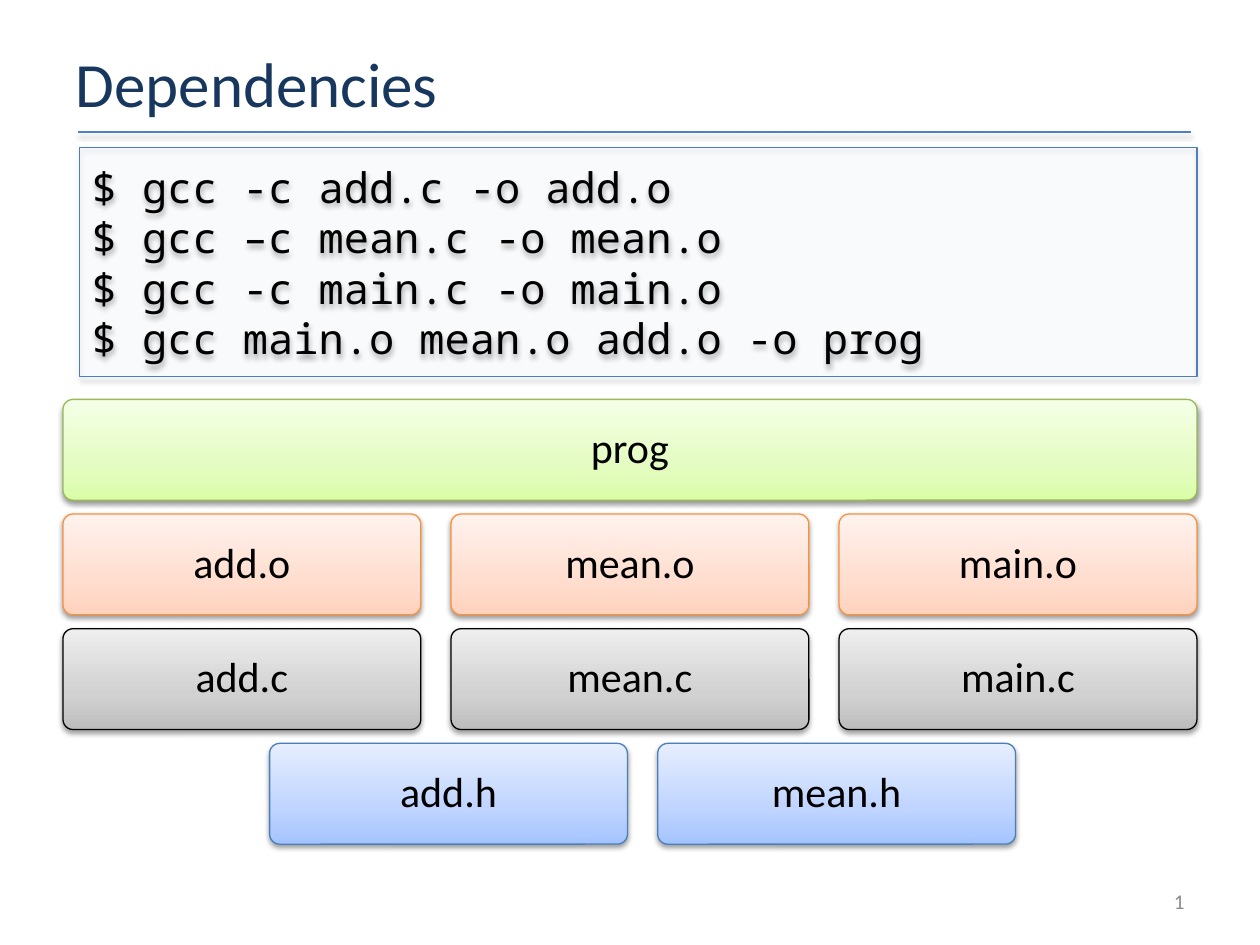
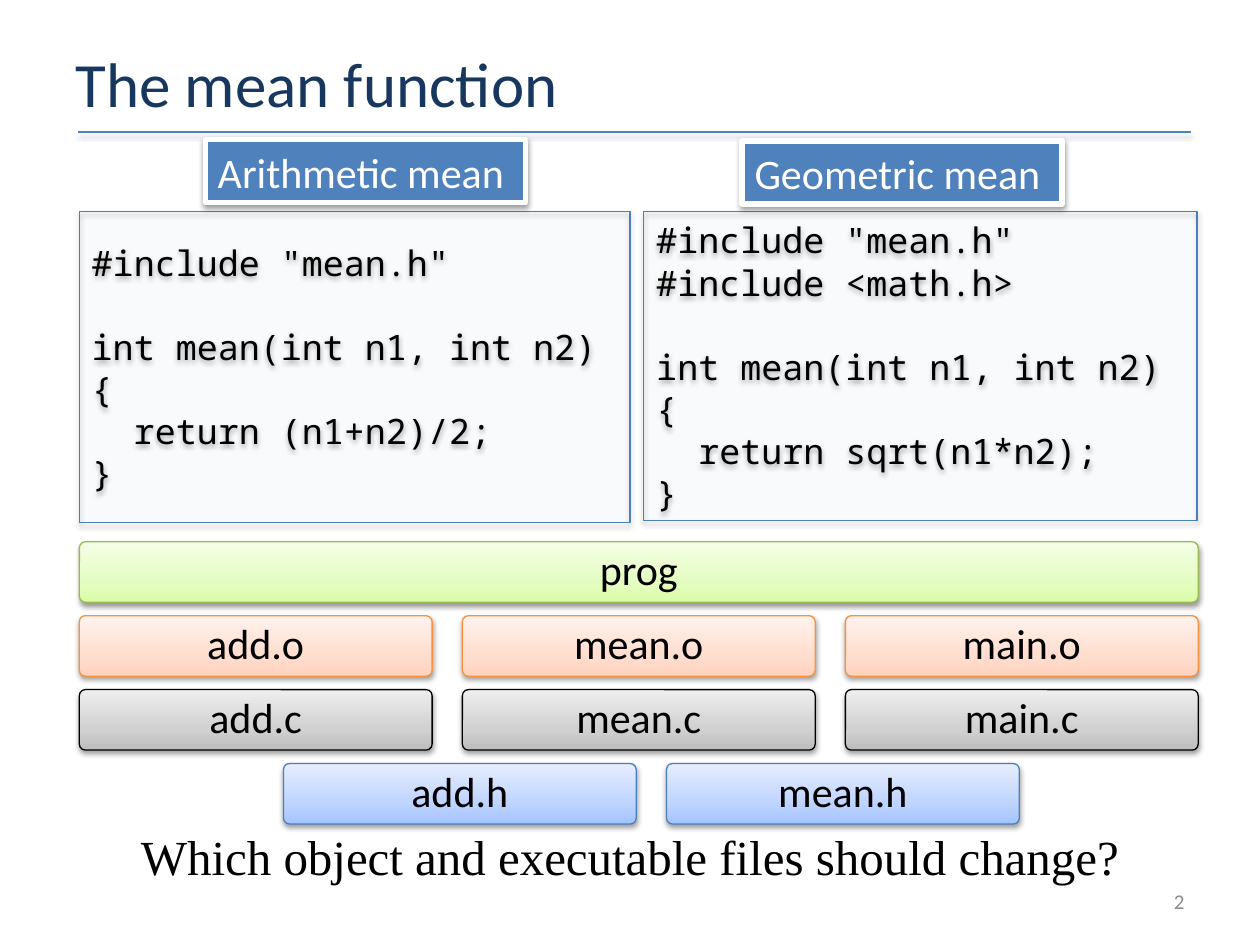
from lxml.etree import SubElement
from pptx import Presentation
from pptx.dml.color import RGBColor
from pptx.enum.shapes import MSO_CONNECTOR as CONN, MSO_SHAPE as SHAPE
from pptx.enum.text import MSO_ANCHOR as ANCHOR, PP_ALIGN as ALIGN
from pptx.oxml import parse_xml
from pptx.oxml.ns import nsdecls, qn
from pptx.util import Inches, Pt

COLORS = {"title": "17375E", "accent": "4F81BD", "code_line": "4B7EBC",
          "text": "000000", "white": "FFFFFF", "number": "8C8C8C"}
# Outline, then gradient stops from bottom to top
FILE_COLORS = {
    "program": ("98B955", ("DAFDA7", "E4FCC2", "F5FFE7")),
    "object": ("F69240", ("FFD2BD", "FFDED0", "FFF2ED")),
    "source": ("000000", ("BDBDBD", "D1D1D1", "EEEEEE")),
    "header": ("4B7EBC", ("A4C4FF", "BFD4FF", "E6EEFF")),
}
SANS, MONO, SERIF = "Calibri", "Noto Sans Mono", "Times New Roman"

COMMANDS = """$ gcc -c add.c -o add.o
$ gcc –c mean.c -o mean.o
$ gcc -c main.c -o main.o
$ gcc main.o mean.o add.o -o prog"""
ARITHMETIC = """#include "mean.h"

int mean(int n1, int n2) {
  return (n1+n2)/2;
}"""
GEOMETRIC = """#include "mean.h"
#include <math.h>

int mean(int n1, int n2) {
  return sqrt(n1*n2);
}"""


def rgb(name):
    return RGBColor.from_string(COLORS.get(name, name))


class Deck:
    def __init__(self):
        self.prs = Presentation()
        self.prs.slide_width, self.prs.slide_height = Inches(10), Inches(7.5)
        self.s = None

    # Shared formatting
    def font(self, p, size, name=SANS, color="text", align=ALIGN.LEFT):
        p.font.size, p.font.name = Pt(size), name
        p.font.color.rgb = rgb(color)
        p.alignment = align

    def outline(self, shape, color, width):
        shape.line.color.rgb = rgb(color)
        shape.line.width = Pt(width)

    def shadow(self, shape, alpha=38, distance=1.6):
        """Drop a soft shadow; call after fill and line are set."""
        effects = SubElement(shape._element.spPr, qn("a:effectLst"))
        outer = SubElement(effects, qn("a:outerShdw"), blurRad=str(Pt(3.1)),
                           dist=str(Pt(distance)), dir="5400000", rotWithShape="0")
        tint = SubElement(outer, qn("a:srgbClr"), val=COLORS["text"])
        SubElement(tint, qn("a:alpha"), val=str(alpha * 1000))

    def shape(self, kind, x, y, w, h):
        return self.s.shapes.add_shape(kind, Inches(x), Inches(y), Inches(w), Inches(h))

    # Slide frame: title, rule and number
    def slide(self, title, number):
        self.s = self.prs.slides.add_slide(self.prs.slide_layouts[5])
        sp = self.s.shapes.title
        sp.left, sp.top, sp.width, sp.height = map(Inches, (0.5, 0.3, 9, 0.71))
        tf = sp.text_frame
        tf.text, tf.vertical_anchor = title, ANCHOR.MIDDLE
        self.font(tf.paragraphs[0], 36, color="title")
        rule = self.s.shapes.add_connector(CONN.STRAIGHT, Inches(0.62), Inches(1.05),
                                           Inches(9.45), Inches(1.05))
        self.outline(rule, "accent", 1)
        self.shadow(rule)
        p = self.text("", 7.17, 6.95, 2.33, 0.4, 12, color="number",
                      align=ALIGN.RIGHT, anchor=ANCHOR.MIDDLE)
        p._p.insert_element_before(parse_xml(
            f'<a:fld {nsdecls("a")} id="{{B6F15528-21DE-4FAA-801E-634DDDAF4B2B}}" '
            f'type="slidenum"><a:rPr lang="en-US"/><a:t>{number}</a:t></a:fld>'),
            "a:endParaRPr")

    def text(self, text, x, y, w, h, size, name=SANS, color="text",
             align=ALIGN.LEFT, anchor=ANCHOR.TOP):
        box = self.s.shapes.add_textbox(Inches(x), Inches(y), Inches(w), Inches(h))
        tf = box.text_frame
        tf.word_wrap, tf.vertical_anchor = True, anchor
        p = tf.paragraphs[0]
        p.text = text
        self.font(p, size, name, color, align)
        return p

    # Code panel: blank lines become spacing, leading spaces become indents
    def code(self, source, x, y, w, h, size):
        sp = self.shape(SHAPE.RECTANGLE, x, y, w, h)
        sp.fill.solid()
        sp.fill.fore_color.rgb = rgb("accent")
        tint = sp._element.spPr.find(qn("a:solidFill"))[0]
        SubElement(tint, qn("a:alpha"), val="2000")
        self.outline(sp, "code_line", 0.75)
        self.shadow(sp, 35, 1.8)
        tf = sp.text_frame
        tf.word_wrap, tf.vertical_anchor = True, ANCHOR.MIDDLE
        p, gap = tf.paragraphs[0], 0
        for i, line in enumerate(source.splitlines()):
            if not line:
                gap = size * 1.2
                continue
            if i:
                p = tf.add_paragraph()
            p.text = line.lstrip()
            self.font(p, size, MONO)
            p.space_before, gap = Pt(gap), 0
            indent = len(line) - len(p.text)
            if indent:
                p._p.get_or_add_pPr().set("marL", str(Pt(indent * size * 0.6)))

    def label(self, text, x, y):
        sp = self.shape(SHAPE.RECTANGLE, x, y, 2.54, 0.5)
        sp.fill.solid()
        sp.fill.fore_color.rgb = rgb("accent")
        self.outline(sp, "white", 3)
        self.shadow(sp)
        tf = sp.text_frame
        tf.word_wrap, tf.vertical_anchor = True, ANCHOR.TOP
        tf.text = text
        self.font(tf.paragraphs[0], 24, color="white")

    # Dependency stack
    def file_box(self, name, kind, x, y, w, h):
        line, stops = FILE_COLORS[kind]
        sp = self.shape(SHAPE.ROUNDED_RECTANGLE, x, y, w, h)
        sp.adjustments[0] = 0.1
        self.outline(sp, line, 0.75)
        grad = "".join(f'<a:gs pos="{pos}"><a:srgbClr val="{color}"/></a:gs>'
                       for pos, color in zip((0, 35000, 100000), stops))
        sp._element.spPr.find(qn("a:ln")).addprevious(parse_xml(
            f'<a:gradFill {nsdecls("a")} rotWithShape="1"><a:gsLst>{grad}</a:gsLst>'
            '<a:lin ang="16200000" scaled="0"/></a:gradFill>'))
        self.shadow(sp)
        tf = sp.text_frame
        tf.text, tf.vertical_anchor = name, ANCHOR.MIDDLE
        p = tf.paragraphs[0]
        self.font(p, 24, align=ALIGN.CENTER)
        p.line_spacing = 0.9

    def stack(self, left, top, width, bottom, height):
        gap = 0.24
        w = (width - 2 * gap) / 3
        step = (bottom - top - height) / 3
        modules = ("add", "mean", "main")
        rows = (("program", ["prog"], left, width),
                ("object", [f"{m}.o" for m in modules], left, w),
                ("source", [f"{m}.c" for m in modules], left, w),
                ("header", [f"{m}.h" for m in modules[:2]], left + w / 2 + 0.22, w))
        for row, (kind, names, x, box_w) in enumerate(rows):
            for col, name in enumerate(names):
                self.file_box(name, kind, x + col * (w + gap), top + row * step,
                              box_w, height)


def main():
    deck = Deck()

    # Dependencies
    deck.slide("Dependencies", 4)
    deck.stack(0.5, 3.17, 9, 6.7, 0.8)
    deck.code(COMMANDS, 0.63, 1.17, 8.87, 1.82, 24)

    # The mean function
    deck.slide("The mean function", 5)
    question = deck.text("Which object and executable files should change?",
                         0.5, 6.51, 9, 0.57, 28, SERIF, align=ALIGN.CENTER)
    question.space_before = Pt(5.6)
    deck.code(ARITHMETIC, 0.63, 1.68, 4.37, 2.47, 20)
    deck.label("Arithmetic mean", 1.63, 1.11)
    deck.code(GEOMETRIC, 5.11, 1.68, 4.39, 2.45, 20)
    deck.label("Geometric mean", 5.89, 1.12)
    deck.stack(0.63, 4.3, 8.88, 6.54, 0.48)

    deck.prs.save("out.pptx")


if __name__ == "__main__":
    main()
